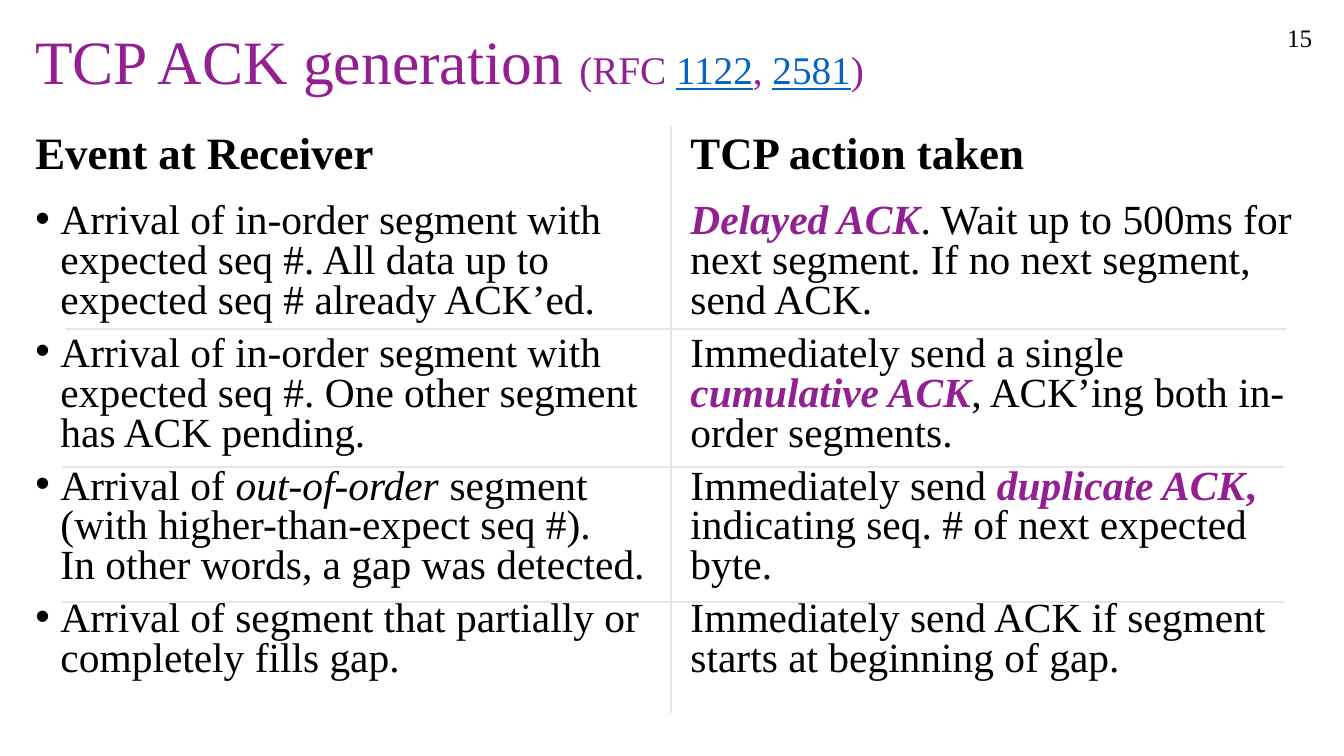
from lxml.etree import SubElement
from pptx import Presentation
from pptx.dml.color import RGBColor
from pptx.enum.shapes import MSO_CONNECTOR
from pptx.enum.text import MSO_ANCHOR, MSO_AUTO_SIZE, PP_ALIGN
from pptx.oxml.ns import qn
from pptx.util import Pt

BLACK = RGBColor(0x00, 0x00, 0x00)
PURPLE = RGBColor(0x93, 0x20, 0x92)
LINK_BLUE = RGBColor(0x05, 0x63, 0xC1)
RULE_GRAY = RGBColor(0xE7, 0xE6, 0xE6)
FONT = "Times New Roman"

PLAIN = {"size": 29.6, "color": BLACK}
ITALIC = {**PLAIN, "italic": True}
TERM = {"size": 29.6, "color": PURPLE, "bold": True, "italic": True}
TERM_MARK = {**TERM, "italic": False}
HEADING = {"size": 32, "color": BLACK, "bold": True}
TITLE = {"size": 44, "color": PURPLE}
REFERENCE = {"size": 28, "color": PURPLE}
LINK = {"size": 28, "color": LINK_BLUE, "underline": True}
NUMBER = {"size": 18, "color": BLACK}

EVENTS = [
    [("Arrival of in-order segment with expected seq #. "
      "All data up to expected seq # already ACK’ed.", PLAIN)],
    [("Arrival of in-order segment with expected seq #. "
      "One other segment has ACK pending.", PLAIN)],
    [("Arrival of ", PLAIN), ("out-of-order", ITALIC),
     (" segment\n(with higher-than-expect seq #).\n"
      "In other words, a gap was detected.", PLAIN)],
    [("Arrival of segment that partially or completely fills gap.", PLAIN)],
]
ACTIONS = [
    [("Delayed ACK", TERM),
     (". Wait up to 500ms for next segment. If no next segment, send ACK.", PLAIN)],
    [("Immediately send a single\n", PLAIN), ("cumulative ACK", TERM),
     (", ACK’ing both in-order segments.", PLAIN)],
    [("Immediately send ", PLAIN), ("duplicate ACK", TERM), (", ", TERM_MARK),
     ("indicating seq. # of next expected byte.", PLAIN)],
    [("Immediately send ACK if segment starts at beginning of gap.", PLAIN)],
]


def place(sp, box):
    for name, value in zip(("left", "top", "width", "height"), box):
        setattr(sp, name, Pt(value))


def add_runs(p, runs):
    for text, style in runs:
        for i, line in enumerate(text.split("\n")):
            if i:
                p.add_line_break()
            if not line:
                continue
            r = p.add_run()
            r.text = line
            r.font.color.rgb = style["color"]
            values = {"name": FONT, "size": Pt(style["size"]),
                      "bold": False, "italic": False}
            values.update({k: v for k, v in style.items() if k not in ("size", "color")})
            for name, value in values.items():
                setattr(r.font, name, value)


def set_bullet(p, indent):
    pPr = p._p.get_or_add_pPr()
    pPr.set("marL", str(Pt(indent)))
    pPr.set("indent", str(-Pt(indent)))
    if indent:
        SubElement(pPr, qn("a:buFont"), typeface="Arial")
        SubElement(pPr, qn("a:buChar"), char="•")
    else:
        SubElement(pPr, qn("a:buNone"))


def fill_text(sp, box, paragraphs, anchor, spacing=0.9, before=0, indent=0,
              align=PP_ALIGN.LEFT):
    place(sp, box)
    tf = sp.text_frame
    frame = {"word_wrap": True, "auto_size": MSO_AUTO_SIZE.NONE,
             "vertical_anchor": anchor}
    for name, value in frame.items():
        setattr(tf, name, value)
    layout = {"alignment": align, "line_spacing": spacing,
              "space_before": Pt(before), "space_after": Pt(0)}
    for i, runs in enumerate(paragraphs):
        p = tf.add_paragraph() if i else tf.paragraphs[0]
        for name, value in layout.items():
            setattr(p, name, value)
        set_bullet(p, indent)
        add_runs(p, runs)


def add_title(s, box):
    runs = [("TCP ACK generation ", TITLE), ("(RFC ", REFERENCE), ("1122", LINK),
            (", ", REFERENCE), ("2581", LINK), (")", REFERENCE)]
    fill_text(s.shapes.title, box, [runs], MSO_ANCHOR.MIDDLE)


def add_column(heading_sp, list_sp, box, heading, items, indent):
    left, top, width, height = box
    fill_text(heading_sp, (left, top, width, 41.5), [[(heading, HEADING)]],
              MSO_ANCHOR.BOTTOM, before=10)
    fill_text(list_sp, (left, top + 51.5, width, height - 51.5), items,
              MSO_ANCHOR.TOP, spacing=0.8, before=9.5, indent=indent)


def add_rule(s, x1, y1, x2, y2):
    line = s.shapes.add_connector(MSO_CONNECTOR.STRAIGHT, Pt(x1), Pt(y1), Pt(x2), Pt(y2))
    line.line.color.rgb = RULE_GRAY
    line.line.width = Pt(1.5)
    SubElement(line._element.spPr, qn("a:effectLst"))


def add_grid(s, box):
    left, top, width, height = box
    for shift, drop in ((2.5, 145), (0, 243.5), (0, 340)):
        x, y = left + shift, top + drop
        add_rule(s, x, y, x + width, y)
    add_rule(s, left + 435.5, top, left + 435.5, top + height)


def add_number(s, box):
    sp = s.shapes.add_textbox(*map(Pt, box))
    fill_text(sp, box, [[("15", NUMBER)]], MSO_ANCHOR.TOP, spacing=1.0,
              align=PP_ALIGN.RIGHT)


def main():
    prs = Presentation()
    prs.slide_width, prs.slide_height = Pt(960), Pt(540)
    s = prs.slides.add_slide(prs.slide_layouts[4])
    ph = s.placeholders
    add_number(s, (897, 12.5, 47.5, 29))
    add_title(s, (18, 11, 925, 70))
    add_column(ph[1], ph[2], (18, 90, 453.6, 439), "Event at Receiver", EVENTS, 18)
    add_column(ph[3], ph[4], (486, 90, 457.2, 439), "TCP action taken", ACTIONS, 0)
    add_grid(s, (44, 90, 873, 419.5))
    prs.save("out.pptx")


if __name__ == "__main__":
    main()
